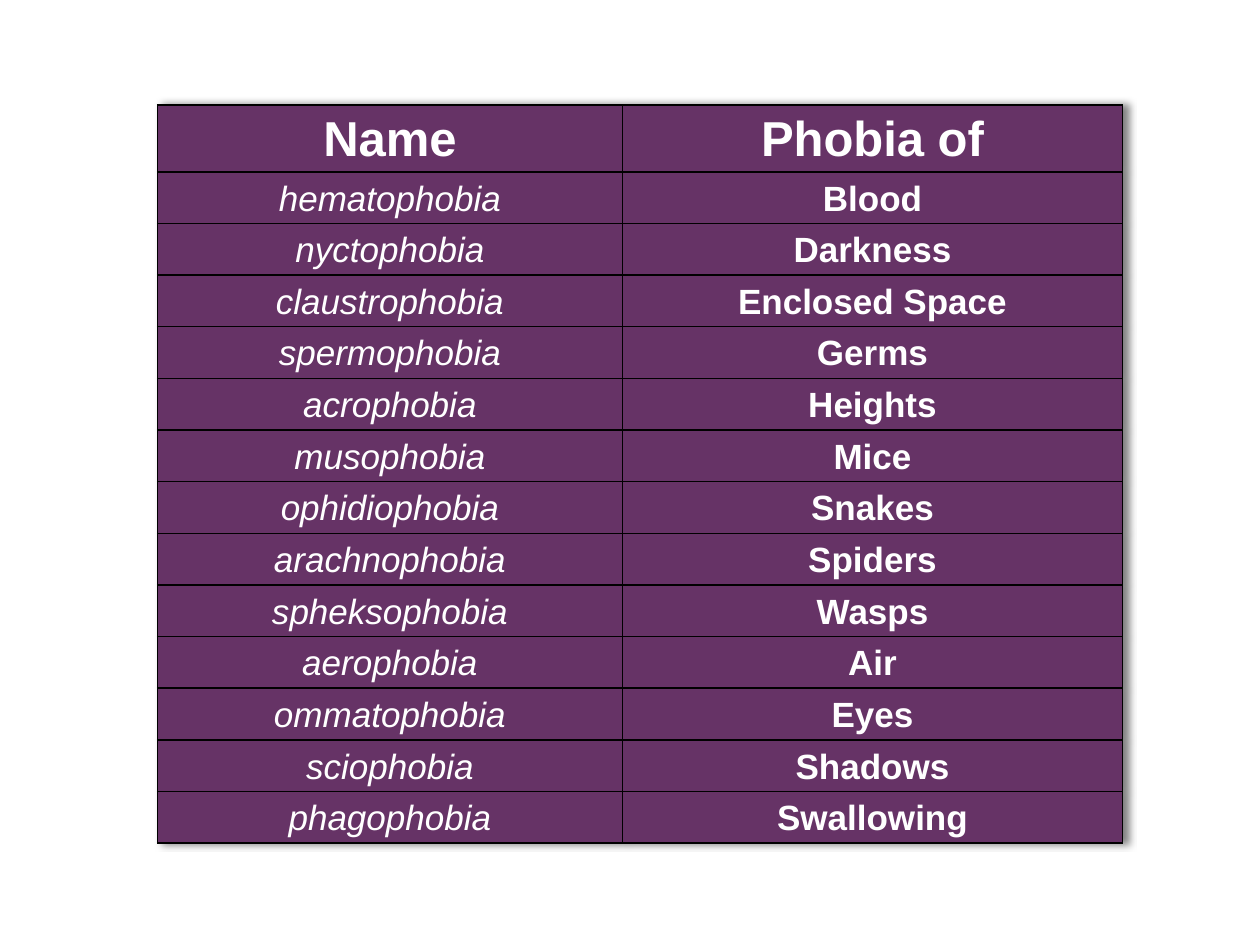
from dataclasses import dataclass

from lxml.etree import SubElement
from pptx import Presentation
from pptx.dml.color import RGBColor
from pptx.enum.text import MSO_ANCHOR, PP_ALIGN
from pptx.oxml import parse_xml
from pptx.oxml.ns import qn
from pptx.util import Inches, Pt

HEADINGS = ("Name", "Phobia of")
PHOBIAS = [
    ("hematophobia", "Blood"),
    ("nyctophobia", "Darkness"),
    ("claustrophobia", "Enclosed Space"),
    ("spermophobia", "Germs"),
    ("acrophobia", "Heights"),
    ("musophobia", "Mice"),
    ("ophidiophobia", "Snakes"),
    ("arachnophobia", "Spiders"),
    ("spheksophobia", "Wasps"),
    ("aerophobia", "Air"),
    ("ommatophobia", "Eyes"),
    ("sciophobia", "Shadows"),
    ("phagophobia", "Swallowing"),
]


@dataclass(frozen=True)
class Theme:
    font: str = "Arial"
    heading_size: int = 28
    body_size: int = 20
    text: str = "FFFFFF"
    fill: str = "663366"
    border: str = "000000"


THEME = Theme()
SLIDE_WIDTH, SLIDE_HEIGHT = 10, 7.5
LEFT, TOP = SLIDE_WIDTH / 8, SLIDE_HEIGHT / 9
COLUMN_WIDTHS = (3.69, 3.97)
HEADING_HEIGHT, ROW_HEIGHT = 0.53, 0.41
CELL_MARGIN = 0.04
HANGING_INDENT = Inches(0.38)

TABLE_SHADOW = (
    '<a:effectLst xmlns:a="http://schemas.openxmlformats.org/drawingml/2006/main">'
    '<a:outerShdw blurRad="50800" dist="38100" dir="0" algn="l" rotWithShape="0">'
    '<a:srgbClr val="000000"><a:alpha val="50000"/></a:srgbClr>'
    "</a:outerShdw></a:effectLst>"
)


def add_borders(cell):
    properties = cell._tc.get_or_add_tcPr()
    for side in ("a:lnL", "a:lnR", "a:lnT", "a:lnB"):
        line = SubElement(properties, qn(side), w=str(Pt(1)))
        fill = SubElement(line, qn("a:solidFill"))
        SubElement(fill, qn("a:srgbClr"), val=THEME.border)


def fill_cell(cell, text, size, italic):
    add_borders(cell)
    cell.fill.solid()
    cell.fill.fore_color.rgb = RGBColor.from_string(THEME.fill)
    cell.vertical_anchor = MSO_ANCHOR.BOTTOM
    cell.margin_top = cell.margin_bottom = Inches(CELL_MARGIN)
    cell.text_frame.text = text
    para = cell.text_frame.paragraphs[0]
    para.alignment = PP_ALIGN.CENTER
    indents = para._p.get_or_add_pPr()
    indents.set("marL", str(HANGING_INDENT))
    indents.set("indent", str(-HANGING_INDENT))
    font = para.runs[0].font
    font.name, font.size = THEME.font, Pt(size)
    font.bold, font.italic = not italic, italic
    font.color.rgb = RGBColor.from_string(THEME.text)


def add_phobia_table(page):
    rows = [HEADINGS, *PHOBIAS]
    height = HEADING_HEIGHT + ROW_HEIGHT * len(PHOBIAS)
    table = page.shapes.add_table(
        len(rows), len(HEADINGS), Inches(LEFT), Inches(TOP),
        Inches(sum(COLUMN_WIDTHS)), Inches(height),
    ).table
    table.first_row = table.horz_banding = False
    table._tbl.tblPr.insert(0, parse_xml(TABLE_SHADOW))
    for column, width in zip(table.columns, COLUMN_WIDTHS):
        column.width = Inches(width)
    for r, texts in enumerate(rows):
        heading = r == 0
        table.rows[r].height = Inches(HEADING_HEIGHT if heading else ROW_HEIGHT)
        size = THEME.heading_size if heading else THEME.body_size
        for c, text in enumerate(texts):
            fill_cell(table.cell(r, c), text, size, italic=not heading and c == 0)


def main():
    deck = Presentation()
    deck.slide_width, deck.slide_height = Inches(SLIDE_WIDTH), Inches(SLIDE_HEIGHT)
    page = deck.slides.add_slide(deck.slide_layouts.get_by_name("Blank"))
    add_phobia_table(page)
    deck.save("out.pptx")


if __name__ == "__main__":
    main()
